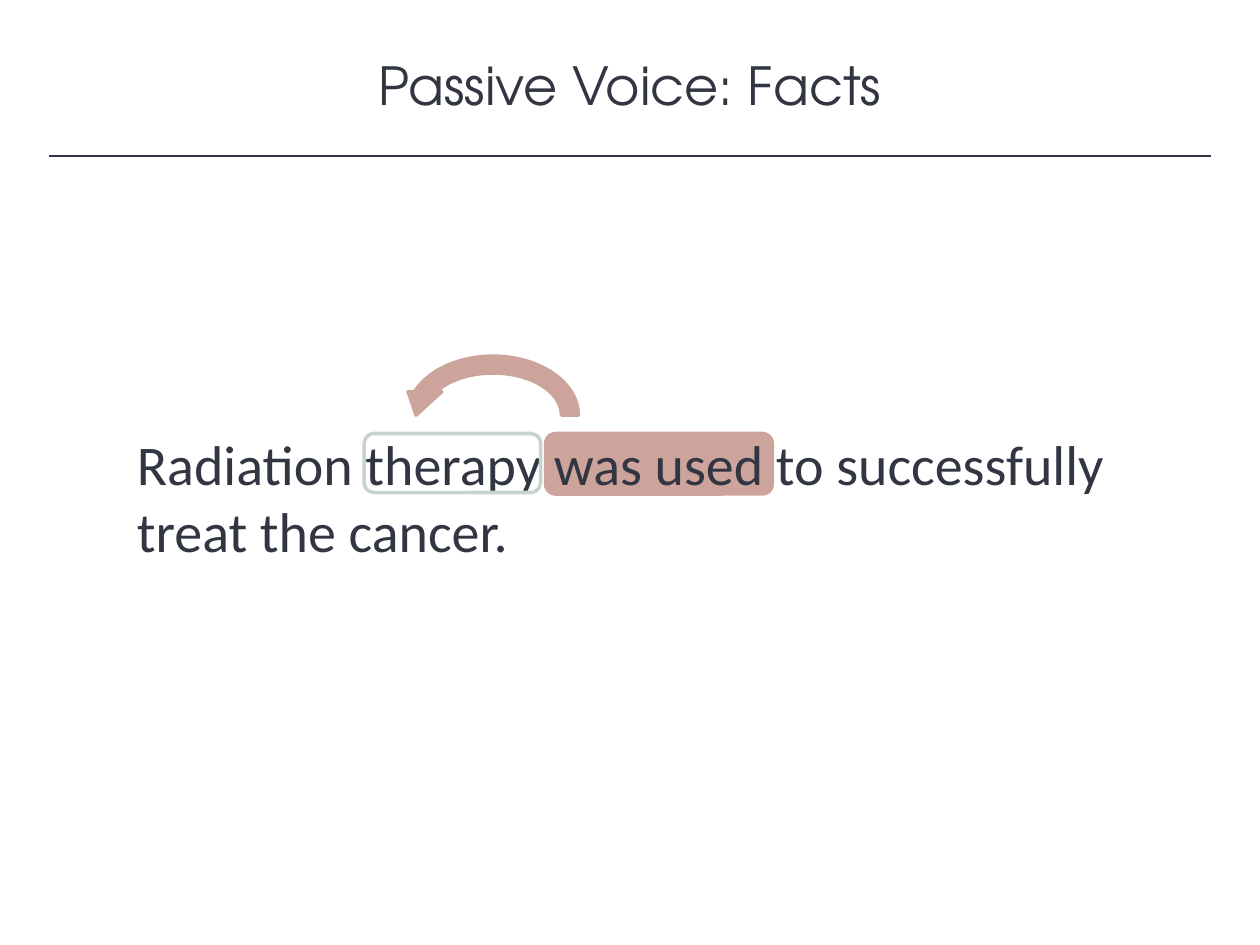
from lxml import etree
from pptx import Presentation
from pptx.dml.color import RGBColor
from pptx.enum.shapes import MSO_CONNECTOR, MSO_SHAPE
from pptx.enum.text import MSO_ANCHOR, MSO_AUTO_SIZE, PP_ALIGN
from pptx.oxml.ns import qn
from pptx.util import Cm, Pt

INK = RGBColor(0x32, 0x35, 0x42)
ROSE = RGBColor(0xCC, 0xA4, 0x9C)
SAGE = RGBColor(0xC7, 0xD4, 0xCB)
STRAIGHT = MSO_CONNECTOR.STRAIGHT
ARROW = MSO_SHAPE.CIRCULAR_ARROW
ROUND = MSO_SHAPE.ROUNDED_RECTANGLE
TOP, MIDDLE = MSO_ANCHOR.TOP, MSO_ANCHOR.MIDDLE
LEFT, CENTER = PP_ALIGN.LEFT, PP_ALIGN.CENTER
GROW = MSO_AUTO_SIZE.SHAPE_TO_FIT_TEXT

HEAD = {"name": "TeX Gyre Adventor", "size": Pt(30)}
BODY = {"name": "Calibri", "size": Pt(32)}


def add_text(slide, box, text, font, align, anchor, after=0):
    frame = slide.shapes.add_textbox(*map(Cm, box)).text_frame
    form = {"word_wrap": True, "auto_size": GROW, "vertical_anchor": anchor}
    for key, value in form.items():
        setattr(frame, key, value)
    par = frame.paragraphs[0]
    par.alignment = align
    par.space_after = Pt(after)
    run = par.add_run()
    run.text = text
    for key, value in font.items():
        setattr(run.font, key, value)
    run.font.color.rgb = INK


def add_mark(slide, kind, box, line, fill=None):
    mark = slide.shapes.add_shape(kind, *map(Cm, box))
    mark.shadow.inherit = False
    if fill is None:
        mark.fill.background()
    else:
        mark.fill.solid()
        mark.fill.fore_color.rgb = fill
    mark.line.color.rgb = line
    mark.line.width = Pt(2)
    return mark


def add_head(slide, box, text):
    left, top, width, height = box
    add_text(slide, (left, top, width, 1.55), text, HEAD, CENTER, TOP)
    inset, base = 0.99, top + height
    ends = left + inset, base, left + width - inset, base
    rule = slide.shapes.add_connector(STRAIGHT, *map(Cm, ends))
    rule.line.color.rgb = INK
    rule.line.width = Pt(1)
    etree.SubElement(rule.element.spPr, qn("a:effectLst"))


def add_body(slide, box, text):
    left, top, _, _ = box
    row = top + 0.23
    arrow = add_mark(slide, ARROW, (left + 5.54, top - 1.5, 3.78, 2.72), ROSE, ROSE)
    arrow.element.spPr.get_or_add_xfrm().set("flipH", "1")
    add_mark(slide, ROUND, (left + 8.49, row, 4.57, 1.22), ROSE, ROSE)
    add_text(slide, box, text, BODY, LEFT, MIDDLE, 18)
    add_mark(slide, ROUND, (left + 4.83, row, 3.56, 1.19), SAGE)


def main():
    deck = Presentation()
    deck.slide_width, deck.slide_height = Cm(25.4), Cm(19.05)
    slide = deck.slides.add_slide(deck.slide_layouts[6])
    add_head(slide, (0, 0.94, 25.4, 2.21), "Passive Voice: Facts")
    add_body(
        slide,
        (2.51, 8.51, 20.37, 3),
        "Radiation therapy was used to successfully treat the cancer.",
    )
    deck.save("out.pptx")


if __name__ == "__main__":
    main()
